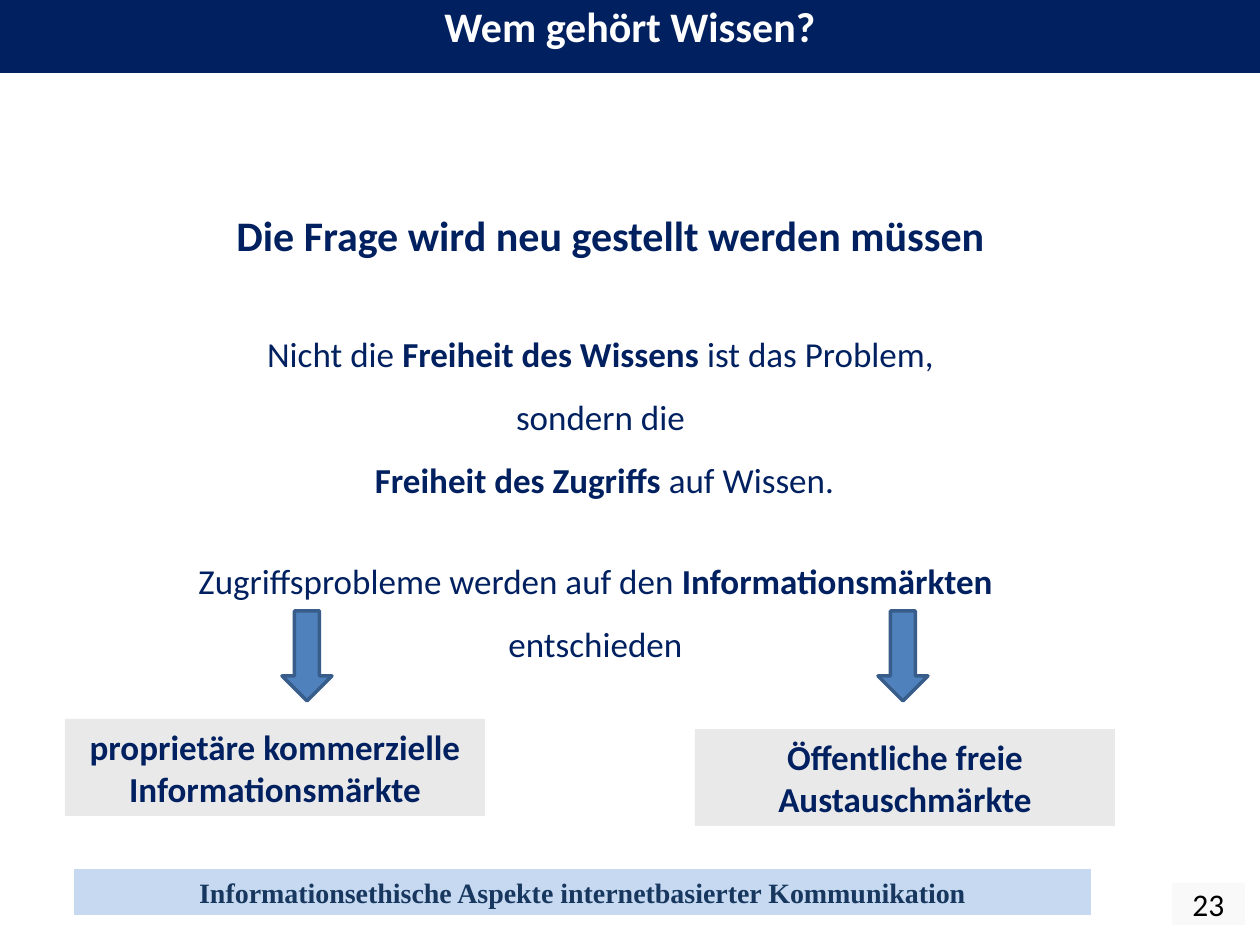
from pptx import Presentation
from pptx.dml.color import RGBColor
from pptx.enum.shapes import MSO_SHAPE
from pptx.enum.text import MSO_ANCHOR, MSO_AUTO_SIZE, PP_ALIGN
from pptx.util import Emu, Pt

PX = 914400 / 126
COLORS = {
    "navy": "002060", "white": "FFFFFF", "black": "000000",
    "grey": "E9E9E9", "pale": "F9F9F9", "light_blue": "C6D9F1",
    "footer_text": "17375E", "arrow": "4F81BD", "arrow_line": "385D8A",
}

# Each paragraph is a list of (text, bold) runs.
TITLE = [[("Wem gehört Wissen?", True)]]
FOOTER = [[("Informationsethische Aspekte internetbasierter Kommunikation", True)]]
PAGE_NUMBER = [[("23", False)]]

# (left, top, width, height) in px, font size, paragraphs
STATEMENTS = [
    ((128, 178, 965, 88), 24,
     [[("Die Frage wird neu gestellt werden müssen", True)]]),
    ((118, 305, 965, 202), 20,
     [[("Nicht die ", False), ("Freiheit des Wissens ", True), ("ist das Problem,", False)],
      [("sondern die", False)],
      [(" ", False), ("Freiheit des Zugriffs ", True), ("auf Wissen.", False)]]),
    ((113, 532, 965, 139), 20,
     [[("Zugriffsprobleme werden auf den ", False), ("Informationsmärkten", True),
       (" entschieden", False)]]),
]

# (box left, box top, arrow left, label)
MARKETS = [
    (65, 719, 282, "proprietäre kommerzielle Informationsmärkte"),
    (695, 729, 878, "Öffentliche freie Austauschmärkte"),
]
MARKET_SIZE = (420, 97)
ARROW_TOP, ARROW_SIZE = 611, (50, 90)


def px(*values):
    return [Emu(round(v * PX)) for v in values]


def rgb(name):
    return RGBColor.from_string(COLORS[name])


def paint(sp, fill):
    sp.fill.solid()
    sp.fill.fore_color.rgb = rgb(fill)


def write(sp, paragraphs, size, color="navy", font="Calibri", spacing=1.0,
          anchor=MSO_ANCHOR.TOP, wrap=True):
    tf = sp.text_frame
    tf.word_wrap = wrap
    tf.auto_size = MSO_AUTO_SIZE.NONE
    tf.vertical_anchor = anchor
    for i, runs in enumerate(paragraphs):
        p = tf.add_paragraph() if i else tf.paragraphs[0]
        p.alignment = PP_ALIGN.CENTER
        p.line_spacing = spacing
        for text, bold in runs:
            r = p.add_run()
            r.text = text
            r.font.name = font
            r.font.size = Pt(size)
            r.font.bold = bold
            r.font.color.rgb = rgb(color)


def add_shape(slide, kind, box, fill):
    sp = slide.shapes.add_shape(kind, *px(*box))
    sp.shadow.inherit = False
    sp.line.fill.background()
    paint(sp, fill)
    return sp


def main():
    prs = Presentation()
    prs.slide_width, prs.slide_height = px(1260, 945)
    slide = prs.slides.add_slide(prs.slide_layouts[5])

    title = slide.shapes.title
    title.left, title.top, title.width, title.height = px(0, 0, 1260, 73)
    paint(title, "navy")
    write(title, TITLE, 24, "white", spacing=0.9)

    number = add_shape(slide, MSO_SHAPE.RECTANGLE, (1172, 883, 73, 42), "pale")
    write(number, PAGE_NUMBER, 18, "black", anchor=MSO_ANCHOR.MIDDLE, wrap=False)

    footer = add_shape(slide, MSO_SHAPE.RECTANGLE, (74, 869, 1017, 46), "light_blue")
    tf = footer.text_frame
    tf.margin_left = tf.margin_top = tf.margin_right = tf.margin_bottom = 0
    write(footer, FOOTER, 16, "footer_text", "Times New Roman", anchor=MSO_ANCHOR.MIDDLE)

    for box, size, paragraphs in STATEMENTS:
        write(slide.shapes.add_textbox(*px(*box)), paragraphs, size, spacing=1.5)

    for left, top, arrow_left, label in MARKETS:
        market = add_shape(slide, MSO_SHAPE.RECTANGLE, (left, top, *MARKET_SIZE), "grey")
        write(market, [[(label, True)]], 20)
        arrow = add_shape(slide, MSO_SHAPE.DOWN_ARROW,
                          (arrow_left, ARROW_TOP, *ARROW_SIZE), "arrow")
        arrow.line.color.rgb = rgb("arrow_line")
        arrow.line.width = Pt(2)

    prs.save("out.pptx")


if __name__ == "__main__":
    main()
